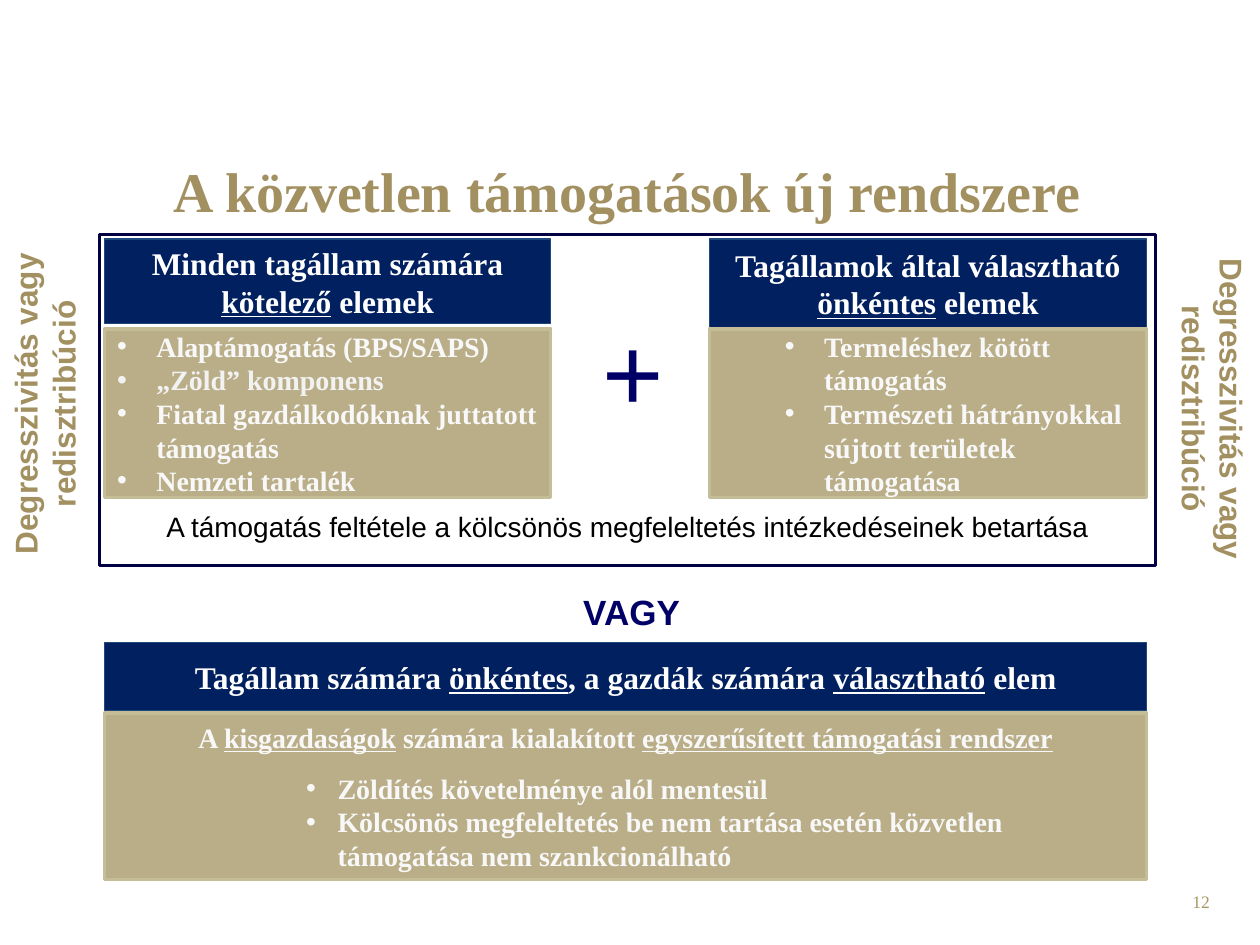
from lxml.etree import SubElement
from pptx import Presentation
from pptx.dml.color import RGBColor
from pptx.enum.shapes import MSO_SHAPE
from pptx.enum.text import MSO_ANCHOR, PP_ALIGN
from pptx.oxml.ns import qn
from pptx.util import Pt

NAVY = RGBColor(0x00, 0x20, 0x60)
BLUE = RGBColor(0x1F, 0x49, 0x7D)
INK = RGBColor(0x00, 0x00, 0x66)
FRAME = RGBColor(0x00, 0x00, 0x42)
SAND = RGBColor(0xBA, 0xAE, 0x88)
SAND_LINE = RGBColor(0xC4, 0xBD, 0x97)
GOLD = RGBColor(0xA2, 0x90, 0x61)
PALE_GOLD = RGBColor(0xA6, 0x97, 0x65)
WHITE = RGBColor(0xFF, 0xFF, 0xFF)
OFF_WHITE = RGBColor(0xF8, 0xF8, 0xF8)
GREY_WHITE = RGBColor(0xF2, 0xF2, 0xF2)
BLACK = RGBColor(0x00, 0x00, 0x00)
SERIF, SANS = "Times New Roman", "Arial"

TITLE = "A közvetlen támogatások új rendszere"
CONDITION = "A támogatás feltétele a kölcsönös megfeleltetés intézkedéseinek betartása"
SIDE = "Degresszivitás vagy redisztribúció"
# Underscores enclose underlined words.
HEADERS = [
    ("Minden tagállam számára _kötelező_ elemek", (59.8, 136.8, 254.9, 48.2)),
    ("Tagállamok által választható _önkéntes_ elemek", (405.4, 136.8, 249.8, 50.4)),
    ("Tagállam számára _önkéntes_, a gazdák számára _választható_ elem",
     (59.8, 367.2, 595.4, 38.9)),
]
PANELS = [
    ((59.8, 187.9, 254.9, 96.5), 0, 22.5, None,
     ["Alaptámogatás (BPS/SAPS)", "„Zöld” komponens",
      "Fiatal gazdálkodóknak juttatott támogatás", "Nemzeti tartalék"]),
    ((405.4, 187.9, 249.8, 96.5), 1, 22.5, None,
     ["Termeléshez kötött támogatás",
      "Természeti hátrányokkal sújtott területek támogatása"]),
    ((59.8, 407.5, 595.4, 95), 3, 18,
     "A _kisgazdaságok_ számára kialakított _egyszerűsített támogatási rendszer_",
     ["Zöldítés követelménye alól mentesül",
      "Kölcsönös megfeleltetés be nem tartása esetén közvetlen támogatása nem szankcionálható"]),
]
TINTS = {"„Zöld” komponens": GREY_WHITE}
LABELS = [
    ("VAGY", (326.2, 334.1, 90.7, 31), dict(size=Pt(20), name=SANS, bold=True), INK, PP_ALIGN.LEFT),
    ("+", (337, 171.4, 68.4, 79.2), dict(size=Pt(60), name=SANS, bold=False), INK, PP_ALIGN.LEFT),
    ("12", (530.6, 505.4, 167.8, 28.8), dict(size=Pt(10), name=SERIF, bold=False), PALE_GOLD, PP_ALIGN.RIGHT),
]
SIDES = [((0, 133.9, 58.3, 193.7), 0), ((660.2, 136.8, 58.3, 193.7), 180)]
HEAD_FONT = dict(size=Pt(18), name=SERIF, bold=True)
BODY_FONT = dict(size=Pt(16), name=SERIF, bold=True)


def write(p, text, font, color, align=PP_ALIGN.LEFT):
    p.alignment = align
    for i, part in enumerate(text.split("_")):
        if part:
            r = p.add_run()
            r.text = part
            for key, value in font.items():
                setattr(r.font, key, value)
            r.font.underline = i % 2 == 1
            r.font.color.rgb = color


def add_rect(s, box, fill, line, width):
    sp = s.shapes.add_shape(MSO_SHAPE.RECTANGLE, *map(Pt, box))
    sp.shadow.inherit = False
    if fill is None:
        sp.fill.background()
    else:
        sp.fill.solid()
        sp.fill.fore_color.rgb = fill
    sp.line.color.rgb = line
    sp.line.width = Pt(width)
    sp.text_frame.vertical_anchor = MSO_ANCHOR.MIDDLE
    return sp


def add_label(s, text, box, font, color, align):
    sp = s.shapes.add_textbox(*map(Pt, box))
    sp.text_frame.word_wrap = True
    write(sp.text_frame.paragraphs[0], text, font, color, align)
    return sp


def add_bullet(p, level, hang):
    p.level = level
    pPr = p._p.get_or_add_pPr()
    pPr.set("marL", str(Pt(36 * level + hang)))
    pPr.set("indent", str(-Pt(hang)))
    SubElement(pPr, qn("a:buFont"), typeface=SANS)
    SubElement(pPr, qn("a:buChar"), char="•")


prs = Presentation()
prs.slide_width, prs.slide_height = Pt(720), Pt(540)
s = prs.slides.add_slide(prs.slide_layouts[5])

frame = add_rect(s, (56.9, 133.9, 603.4, 189.4), None, FRAME, 2)
tf = frame.text_frame
tf.vertical_anchor = MSO_ANCHOR.TOP
tf.margin_top = Pt(157)
write(tf.paragraphs[0], CONDITION, dict(size=Pt(16), name=SANS), BLACK, PP_ALIGN.CENTER)

title = s.shapes.title
title.left, title.top, title.width, title.height = map(Pt, (34.6, 85.7, 648, 45.4))
title.text_frame.vertical_anchor = MSO_ANCHOR.MIDDLE
write(title.text_frame.paragraphs[0], TITLE, dict(size=Pt(32), name=SERIF, bold=True),
      GOLD, PP_ALIGN.CENTER)

for text, box in HEADERS:
    sp = add_rect(s, box, NAVY, BLUE, 1)
    write(sp.text_frame.paragraphs[0], text, HEAD_FONT, WHITE, PP_ALIGN.CENTER)

for box, level, hang, intro, items in PANELS:
    tf = add_rect(s, box, SAND, SAND_LINE, 2).text_frame
    p = tf.paragraphs[0]
    if intro:
        write(p, intro, BODY_FONT, OFF_WHITE, PP_ALIGN.CENTER)
        p.space_after = Pt(10)
        p = tf.add_paragraph()
    for i, item in enumerate(items):
        if i:
            p = tf.add_paragraph()
        add_bullet(p, level, hang)
        write(p, item, BODY_FONT, TINTS.get(item, OFF_WHITE))

for label in LABELS:
    add_label(s, *label)

for box, turn in SIDES:
    sp = add_label(s, SIDE, box, dict(size=Pt(18), name=SANS, bold=True), GOLD, PP_ALIGN.CENTER)
    sp.text_frame._txBody.bodyPr.set("vert", "vert270")
    sp.rotation = turn

prs.save("out.pptx")
